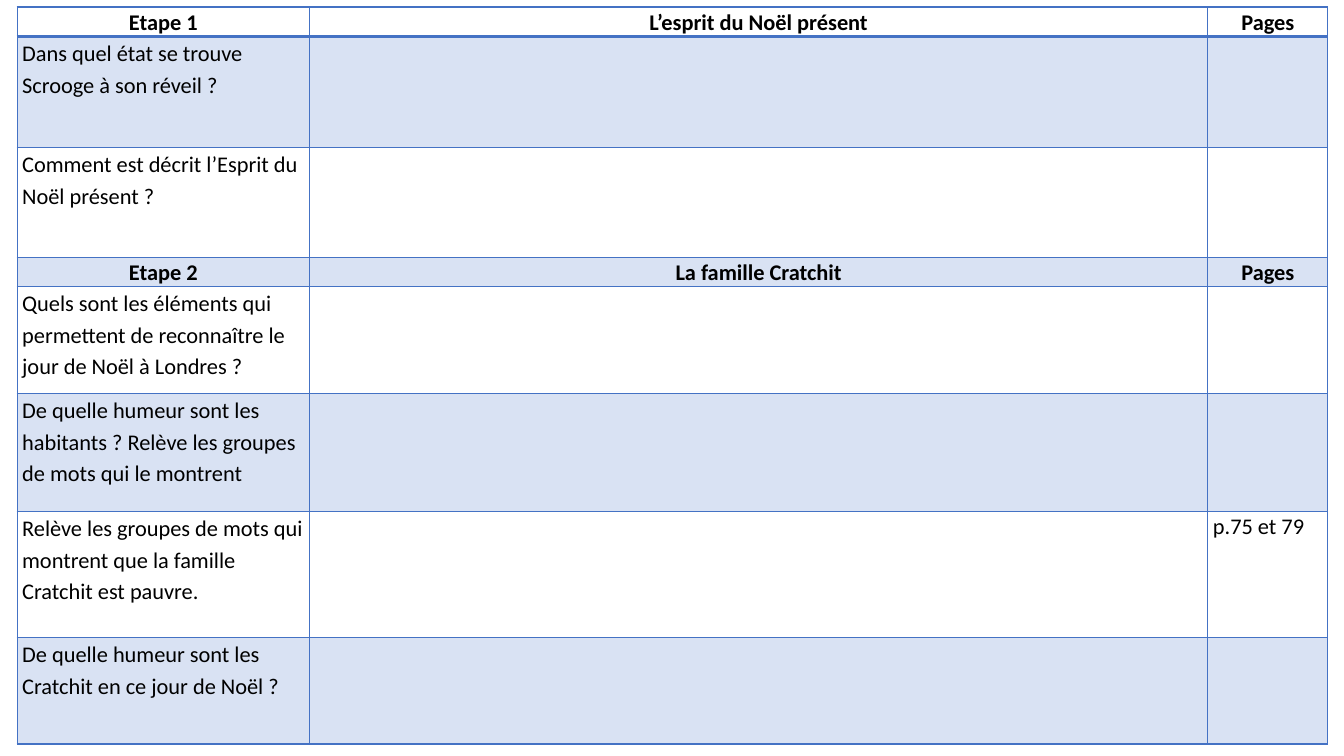
"""Build a reading worksheet slide: two steps of questions in one table."""
from lxml import etree
from pptx import Presentation, util as u
from pptx.dml.color import RGBColor
from pptx.enum import text
from pptx.oxml.ns import qn

BLUE = RGBColor(0x44, 0x72, 0xC4)
BLACK = RGBColor(0, 0, 0)
TINT_ALPHA = 20000
COLUMN_WIDTHS = [2.9, 8.91, 1.19]
HEADING_ROWS = {0, 3}
TINTED_ROWS = {1, 3, 5, 7}
ROWS = [
    (0.29, ["Etape 1", "L’esprit du Noël présent", "Pages"]),
    (1.1, ["Dans quel état se trouve Scrooge à son réveil ?", "", ""]),
    (1.09, ["Comment est décrit l’Esprit du Noël présent ?", "", ""]),
    (0.29, ["Etape 2", "La famille Cratchit", "Pages"]),
    (1.06, ["Quels sont les éléments qui permettent de reconnaître le jour de Noël à Londres ?", "", ""]),
    (1.17, ["De quelle humeur sont les habitants ? Relève les groupes de mots qui le montrent", "", ""]),
    (1.25, ["Relève les groupes de mots qui montrent que la famille Cratchit est pauvre.", "", "p.75 et 79"]),
    (1.06, ["De quelle humeur sont les Cratchit en ce jour de Noël ?", "", ""]),
]


def set_borders(cell, widths):
    """Draw the left, right, top and bottom borders, with widths in points."""
    properties = cell._tc.get_or_add_tcPr()
    for index, (side, width) in enumerate(zip("LRTB", widths)):
        line = etree.Element(qn(f"a:ln{side}"), w=str(u.Pt(width)))
        fill = etree.SubElement(line, qn("a:solidFill"))
        etree.SubElement(fill, qn("a:srgbClr"), val=str(BLUE))
        properties.insert(index, line)


presentation = Presentation()
presentation.slide_width = u.Inches(13.33)
presentation.slide_height = u.Inches(7.5)
slide = presentation.slides.add_slide(presentation.slide_layouts[6])

table_height = sum(height for height, _ in ROWS)
table = slide.shapes.add_table(
    len(ROWS), len(COLUMN_WIDTHS), u.Inches(0.17), u.Inches(0.07),
    u.Inches(sum(COLUMN_WIDTHS)), u.Inches(table_height)).table
table.first_row = False
table.horz_banding = False
for column, width in zip(table.columns, COLUMN_WIDTHS):
    column.width = u.Inches(width)

for row_index, (height, wordings) in enumerate(ROWS):
    table.rows[row_index].height = u.Inches(height)
    heading = row_index in HEADING_ROWS
    for column_index, wording in enumerate(wordings):
        cell = table.cell(row_index, column_index)
        cell.margin_left = cell.margin_right = u.Inches(0.05)
        cell.margin_top = cell.margin_bottom = 0
        if row_index in TINTED_ROWS:
            cell.fill.solid()
            cell.fill.fore_color.rgb = BLUE
            color = cell._tc.tcPr.find(f"{qn('a:solidFill')}/{qn('a:srgbClr')}")
            etree.SubElement(color, qn("a:alpha"), val=str(TINT_ALPHA))
        else:
            cell.fill.background()
        set_borders(cell, [1, 1, 2 if row_index == 1 else 1, 2 if row_index == 0 else 1])

        if not wording:
            continue
        cell.text_frame.text = wording
        paragraph = cell.text_frame.paragraphs[0]
        question = column_index == 0 and not heading
        paragraph.line_spacing = 1.15 if question else 1.07
        paragraph.alignment = text.PP_ALIGN.CENTER if heading else text.PP_ALIGN.LEFT
        font = paragraph.runs[0].font
        font.name = "Calibri"
        font.size = u.Pt(16)
        font.bold = heading
        font.color.rgb = BLACK

presentation.save("out.pptx")
